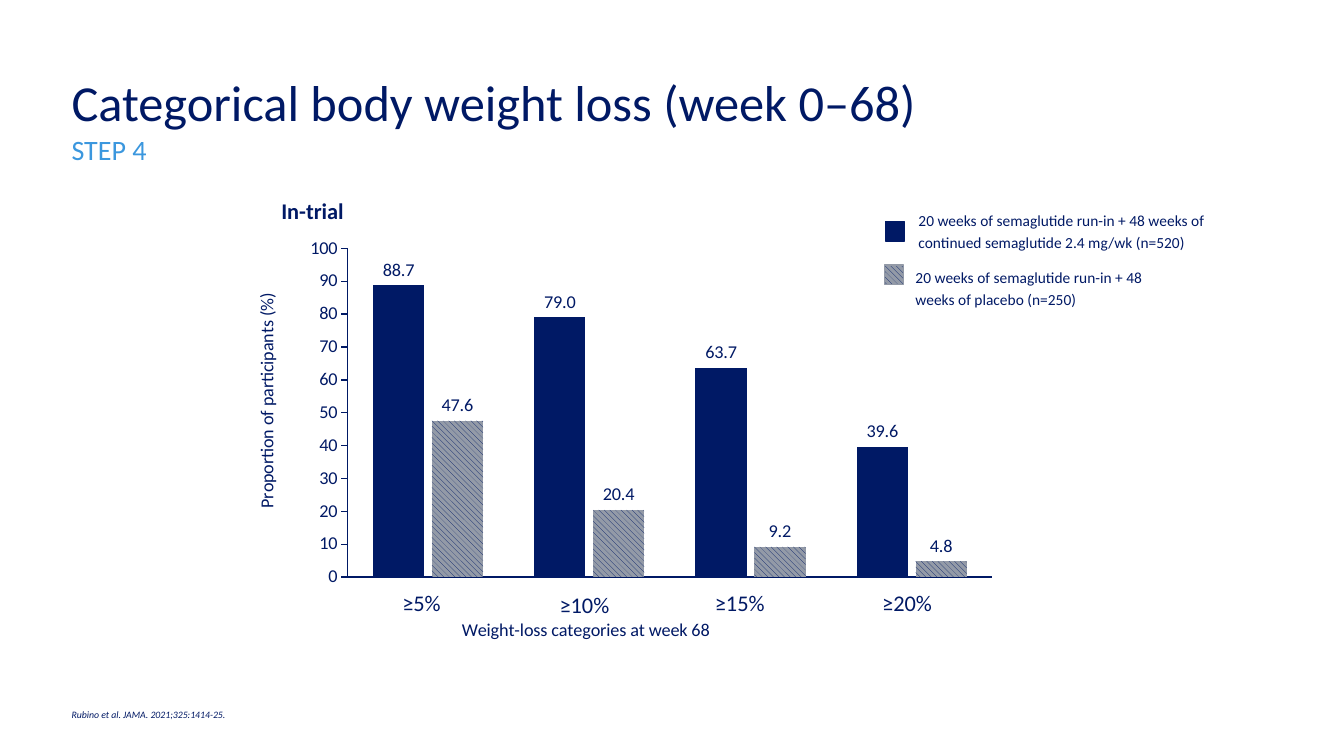
"""Build the slide on categorical body weight loss in STEP 4."""
from lxml import etree
from pptx import Presentation
from pptx.chart.data import CategoryChartData
from pptx.dml.color import RGBColor
from pptx.enum.chart import XL_CHART_TYPE, XL_LABEL_POSITION, XL_TICK_LABEL_POSITION, XL_TICK_MARK
from pptx.enum.dml import MSO_PATTERN
from pptx.enum.shapes import MSO_SHAPE
from pptx.enum.text import MSO_ANCHOR, PP_ALIGN
from pptx.oxml.ns import qn
from pptx.util import Inches, Pt

COLORS = {"navy": "001965", "blue": "3B97DE", "gray": "939AA7", "white": "FFFFFF"}


def add_text(text, shape=None, paragraph=None, size=11, color="navy", bold=False,
             italic=False, spacing=1.2, anchor=MSO_ANCHOR.TOP):
    """Add a formatted run to a paragraph, or to the first one of a shape."""
    if shape is not None:
        frame = shape.text_frame
        frame.margin_left = frame.margin_right = frame.margin_top = frame.margin_bottom = 0
        frame.word_wrap = True
        frame.vertical_anchor = anchor
        paragraph = frame.paragraphs[0]
        paragraph.alignment = PP_ALIGN.LEFT
        paragraph.line_spacing = spacing
    run = paragraph.add_run()
    run.text = text
    run.font.name = "Calibri"
    run.font.size = Pt(size)
    run.font.bold = bold
    run.font.italic = italic
    run.font.color.rgb = RGBColor.from_string(COLORS[color])


def fill_bar(fill, hatched):
    """Fill a bar or legend key with solid navy or with hatching."""
    if hatched:
        fill.patterned()
        fill.pattern = MSO_PATTERN.WIDE_DOWNWARD_DIAGONAL
        fill.back_color.rgb = RGBColor.from_string(COLORS["gray"])
    else:
        fill.solid()
    fill.fore_color.rgb = RGBColor.from_string(COLORS["navy"])


presentation = Presentation()
presentation.slide_width = Inches(13.33)
presentation.slide_height = Inches(7.5)
slide = presentation.slides.add_slide(presentation.slide_layouts[5])
navy = RGBColor.from_string(COLORS["navy"])

title = slide.shapes.title
title.left, title.top, title.width, title.height = map(Inches, (0.71, 0.71, 12.24, 1.42))
add_text("Categorical body weight loss (week 0–68)", shape=title, size=36, spacing=1.0)
title_paragraph = title.text_frame.paragraphs[0]
title_paragraph.add_line_break()
add_text("STEP 4", paragraph=title_paragraph, size=20, color="blue")

heading = slide.shapes.add_textbox(Inches(2.79), Inches(1.9), Inches(5.76), Inches(0.3))
add_text("In-trial", shape=heading, size=16, bold=True)
citation = slide.shapes.add_textbox(Inches(0.71), Inches(6.8), Inches(9.46), Inches(0.35))
add_text("Rubino et al. JAMA. 2021;325:1414-25.", shape=citation,
         size=7, italic=True, spacing=1.0, anchor=MSO_ANCHOR.BOTTOM)

categories = ["≥5%", "≥10%", "≥15%", "≥20%"]
chart_data = CategoryChartData()
chart_data.categories = categories
chart_data.add_series("Series 1", (88.7, 79.0, 63.7, 39.6))
chart_data.add_series("Series 2", (47.6, 20.4, 9.2, 4.8))
chart = slide.shapes.add_chart(
    XL_CHART_TYPE.COLUMN_CLUSTERED, Inches(2.49), Inches(2.28),
    Inches(7.36), Inches(4.14), chart_data).chart
chart.has_legend = False
chart.has_title = False
chart.font.name = "Calibri"
chart.font.size = Pt(13)
chart.font.color.rgb = navy

plot = chart.plots[0]
plot.gap_width = 100
plot.overlap = -15
plot.vary_by_categories = False
for series, hatched in zip(plot.series, (False, True)):
    fill_bar(series.format.fill, hatched)
    labels = series.data_labels
    labels.show_value = True
    labels.position = XL_LABEL_POSITION.OUTSIDE_END
    labels.number_format = "0.0"
    labels.number_format_is_linked = False
    labels.font.name = "Calibri"
    labels.font.size = Pt(13)
    labels.font.color.rgb = navy

category_axis, value_axis = chart.category_axis, chart.value_axis
for axis, axis_title in ((category_axis, "Weight-loss categories at week 68"),
                         (value_axis, "Proportion of participants (%)")):
    axis.has_major_gridlines = False
    axis.format.line.color.rgb = navy
    axis.format.line.width = Pt(1)
    add_text(axis_title, paragraph=axis.axis_title.text_frame.paragraphs[0], size=13)
category_axis.major_tick_mark = XL_TICK_MARK.NONE
category_axis.tick_label_position = XL_TICK_LABEL_POSITION.NONE
value_axis.major_tick_mark = XL_TICK_MARK.OUTSIDE
value_axis.minimum_scale, value_axis.maximum_scale = 0, 100
value_axis.major_unit = 10
value_axis.tick_labels.number_format = "0"
value_axis.tick_labels.number_format_is_linked = False

plot_area = chart.element.find(".//" + qn("c:plotArea"))
layouts = (
    (plot_area, {"layoutTarget": "inner", "xMode": "edge", "yMode": "edge",
                 "x": 0.13, "y": 0.045, "w": 0.87, "h": 0.795}),
    (plot_area.find(qn("c:catAx")).find(qn("c:title")),
     {"xMode": "edge", "yMode": "edge", "x": 0.28, "y": 0.93}),
    (plot_area.find(qn("c:valAx")).find(qn("c:title")),
     {"xMode": "edge", "yMode": "edge", "x": 0, "y": 0.15}),
)
for parent, settings in layouts:
    layout = parent.find(qn("c:layout"))
    if layout is None:
        layout = etree.Element(qn("c:layout"))
        text = parent.find(qn("c:tx"))
        parent.insert(0 if text is None else parent.index(text) + 1, layout)
    for child in list(layout):
        layout.remove(child)
    manual = etree.SubElement(layout, qn("c:manualLayout"))
    for name, value in settings.items():
        etree.SubElement(manual, qn("c:" + name)).set("val", str(value))

legend = (
    ("20 weeks of semaglutide run-in + 48 weeks of continued semaglutide 2.4 mg/wk (n=520)",
     (9.11, 2.06, 3.37, 0.43), (8.78, 2.2), False),
    ("20 weeks of semaglutide run-in + 48 weeks of placebo (n=250)",
     (9.08, 2.62, 2.31, 0.43), (8.77, 2.63), True),
)
for text, box, (left, top), hatched in legend:
    add_text(text, shape=slide.shapes.add_textbox(*map(Inches, box)))
    key = slide.shapes.add_shape(MSO_SHAPE.RECTANGLE, Inches(left), Inches(top),
                                 Inches(0.19), Inches(0.19))
    key.shadow.inherit = False
    fill_bar(key.fill, hatched)
    key.line.color.rgb = RGBColor.from_string(COLORS["gray" if hatched else "navy"])
    key.line.width = Pt(1)

label_boxes = ((3.99, 5.79, 0.56), (5.55, 5.81, 1.21), (7.09, 5.79, 1.21), (8.75, 5.79, 1.21))
for category, (left, top, width) in zip(categories, label_boxes):
    label = slide.shapes.add_shape(MSO_SHAPE.RECTANGLE, Inches(left), Inches(top),
                                   Inches(width), Inches(0.3))
    label.shadow.inherit = False
    label.fill.solid()
    label.fill.fore_color.rgb = RGBColor.from_string(COLORS["white"])
    label.line.fill.background()
    add_text(category, shape=label, size=16)

presentation.save("out.pptx")
